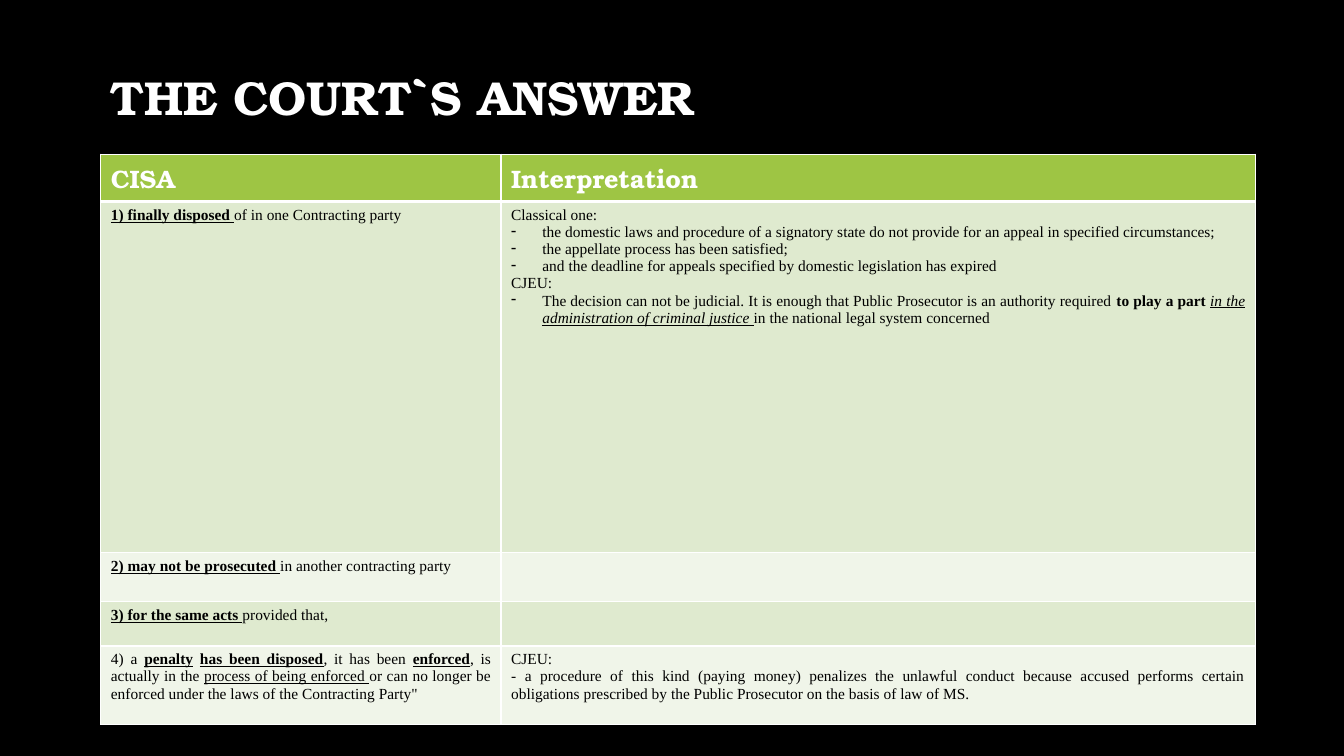
from lxml.etree import SubElement
from pptx import Presentation
from pptx.dml.color import RGBColor
from pptx.enum.text import MSO_ANCHOR, PP_ALIGN
from pptx.oxml.ns import qn
from pptx.util import Emu, Inches, Pt

COLOURS = {
    "background": "000000",
    "light text": "FFFFFF",
    "dark text": "000000",
    "border": "FFFFFF",
    "header": "9EC544",
    "odd row": "DFEACF",
    "even row": "F0F5E9",
}
HEADING_FONT, BODY_FONT = "TeX Gyre Bonum", "Times New Roman"
TITLE = {"name": HEADING_FONT, "size": Pt(34), "bold": True, "color": "light text"}
HEADER = {**TITLE, "size": Pt(18)}
BODY = {"name": BODY_FONT, "size": Pt(11), "bold": False, "color": "dark text"}
BOLD = {"bold": True}
UNDERLINED = {"underline": True}
KEY = {**BOLD, **UNDERLINED}
STRESSED = {"italic": True, **UNDERLINED}

# A cell is a list of paragraphs: (bulleted, [(text, format), ...])
ROWS = [
    [[(False, [("CISA", {})])], [(False, [("Interpretation", {})])]],
    [
        [(False, [("1) finally disposed ", KEY), ("of in one Contracting party", {})])],
        [
            (False, [("Classical one:", {})]),
            (True, [("the domestic laws and procedure of a signatory state do not provide "
                     "for an appeal in specified circumstances;", {})]),
            (True, [("the appellate process has been satisfied;", {})]),
            (True, [("and the deadline for appeals specified by domestic legislation "
                     "has expired", {})]),
            (False, [("CJEU:", {})]),
            (True, [("The decision can not be judicial. It is enough that Public Prosecutor "
                     "is an authority required ", {}),
                    ("to play a part ", BOLD),
                    ("in the administration of criminal justice ", STRESSED),
                    ("in the national legal system concerned", {})]),
        ],
    ],
    [[(False, [("2) may not be prosecuted ", KEY), ("in another contracting party", {})])], []],
    [[(False, [("3) for the same acts ", KEY), ("provided that,", {})])], []],
    [
        [(False, [("4) a ", {}), ("penalty", KEY), (" ", {}), ("has been disposed", KEY),
                  (", it has been ", {}), ("enforced", KEY), (", is actually in the ", {}),
                  ("process of being enforced ", UNDERLINED),
                  ("or can no longer be enforced under the laws of the Contracting Party\"", {})])],
        [
            (False, [("CJEU:", {})]),
            (False, [("- a procedure of this kind (paying money) penalizes the unlawful conduct "
                      "because accused performs certain obligations prescribed by the Public "
                      "Prosecutor on the basis of law of MS.", {})]),
        ],
    ],
]


class SlideBuilder:
    """Places elements on a grid of 133.3 columns by 75 rows."""

    def __init__(self, presentation):
        self.column = presentation.slide_width / 133.3
        self.row = presentation.slide_height / 75
        self.slide = presentation.slides.add_slide(presentation.slide_layouts[6])
        fill = self.slide.background.fill
        fill.solid()
        fill.fore_color.rgb = self.colour("background")

    def colour(self, name):
        return RGBColor.from_string(COLOURS[name])

    def across(self, columns):
        return Emu(round(columns * self.column))

    def down(self, rows):
        return Emu(round(rows * self.row))

    def box(self, left, top, width, height):
        return self.across(left), self.down(top), self.across(width), self.down(height)

    def add_run(self, paragraph, text, style):
        run = paragraph.add_run()
        run.text = text
        for name, value in style.items():
            if name == "color":
                run.font.color.rgb = self.colour(value)
            else:
                setattr(run.font, name, value)

    def add_title(self, text, *place):
        frame = self.slide.shapes.add_textbox(*self.box(*place)).text_frame
        frame.word_wrap = True
        frame.vertical_anchor = MSO_ANCHOR.MIDDLE
        paragraph = frame.paragraphs[0]
        paragraph.line_spacing = 0.9
        self.add_run(paragraph, text, TITLE)

    def add_bullet(self, paragraph):
        properties = paragraph._p.get_or_add_pPr()
        indent = Inches(0.31)
        properties.set("marL", str(indent))
        properties.set("indent", str(-indent))
        SubElement(properties, qn("a:buChar"), char="-")

    def add_borders(self, cell, weights):
        properties = cell._tc.get_or_add_tcPr()
        for side, weight in weights.items():
            line = SubElement(properties, qn(f"a:ln{side}"), w=str(Pt(weight)))
            fill = SubElement(line, qn("a:solidFill"))
            SubElement(fill, qn("a:srgbClr"), val=COLOURS["border"])

    def fill_cell(self, cell, paragraphs, style):
        frame = cell.text_frame
        for index, (bulleted, runs) in enumerate(paragraphs):
            paragraph = frame.add_paragraph() if index else frame.paragraphs[0]
            paragraph.alignment = PP_ALIGN.JUSTIFY
            if bulleted:
                self.add_bullet(paragraph)
            for text, changes in runs:
                self.add_run(paragraph, text, {**style, **changes})

    def add_table(self, left, top, widths, heights, rows):
        place = self.box(left, top, sum(widths), sum(heights))
        table = self.slide.shapes.add_table(len(heights), len(widths), *place).table
        for column, width in zip(table.columns, widths):
            column.width = self.across(width)
        for index, (row, height, contents) in enumerate(zip(table.rows, heights, rows)):
            row.height = self.down(height)
            band = ("odd row" if index % 2 else "even row") if index else "header"
            weights = {"L": 1, "R": 1, "T": 3 if index == 1 else 1, "B": 1 if index else 3}
            for cell, paragraphs in zip(row.cells, contents):
                self.add_borders(cell, weights)
                cell.fill.solid()
                cell.fill.fore_color.rgb = self.colour(band)
                self.fill_cell(cell, paragraphs, BODY if index else HEADER)


def main():
    presentation = Presentation()
    presentation.slide_width, presentation.slide_height = Inches(13.33), Inches(7.5)
    builder = SlideBuilder(presentation)
    builder.add_title("THE COURT`S ANSWER", 10, 6.7, 113.2, 6.5)
    builder.add_table(10, 15.3, [39.7, 74.8], [4.7, 34.8, 4.9, 4.4, 7.8], ROWS)
    presentation.save("out.pptx")


if __name__ == "__main__":
    main()
